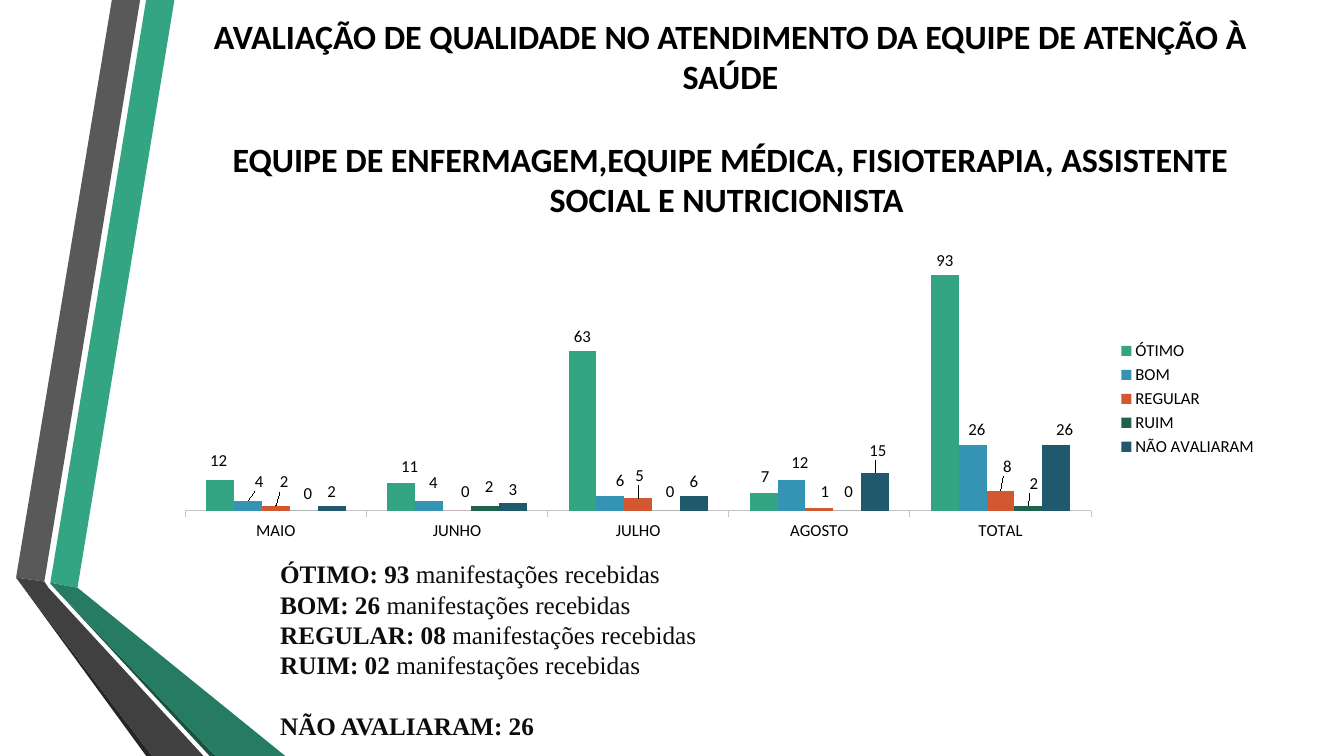
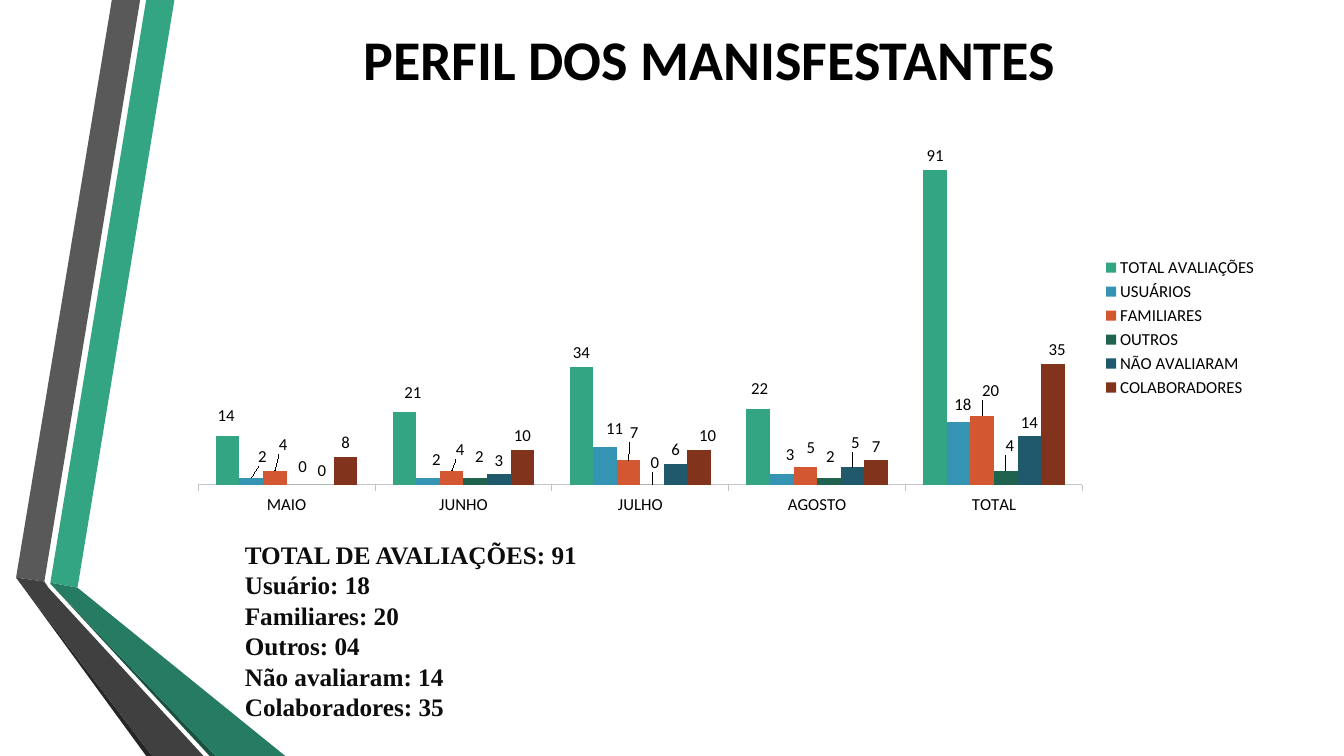
from pptx import Presentation
from pptx.chart.data import CategoryChartData
from pptx.dml.color import RGBColor
from pptx.enum.chart import XL_CHART_TYPE, XL_LABEL_POSITION, XL_LEGEND_POSITION, XL_TICK_MARK
from pptx.enum.text import MSO_ANCHOR, MSO_AUTO_SIZE, PP_ALIGN
from pptx.oxml import parse_xml
from pptx.oxml.ns import nsdecls
from pptx.util import Pt

BLACK = RGBColor(0x00, 0x00, 0x00)
INK = RGBColor(0x0D, 0x0D, 0x0D)
AXIS = RGBColor(0xC5, 0xC5, 0xC5)
GREEN = RGBColor(0x33, 0xA5, 0x83)
MID_GREEN = RGBColor(0x26, 0x7C, 0x62)
DEEP_GREEN = RGBColor(0x1A, 0x52, 0x42)
GREY = RGBColor(0x59, 0x59, 0x59)
DARK_GREY = RGBColor(0x40, 0x40, 0x40)
CHARCOAL = RGBColor(0x26, 0x26, 0x26)
BLUE = RGBColor(0x35, 0x94, 0xB4)
ORANGE = RGBColor(0xD3, 0x57, 0x31)
FOREST = RGBColor(0x1F, 0x63, 0x4F)
NAVY = RGBColor(0x20, 0x59, 0x6C)
RUST = RGBColor(0x81, 0x33, 0x1B)
SERIES_COLORS = [GREEN, BLUE, ORANGE, FOREST, NAVY, RUST]

BANDS = [
    (GREEN, [(36, 416.2), (55.4, 419.8), (124.6, 0), (104.4, 0)]),
    (GREY, [(100.1, 0), (79.9, 0), (11.5, 412.6), (31.7, 415.4)]),
    (CHARCOAL, [(11.5, 412.6), (104.4, 540), (108.7, 540)]),
    (DEEP_GREEN, [(36, 416.9), (149.8, 540), (154.1, 540)]),
    (MID_GREEN, [(36, 416.9), (154.1, 540), (203.8, 540), (55.4, 419.8), (36, 416.2)]),
    (DARK_GREY, [(145.4, 540), (34.6, 419.8), (31.7, 415.4), (11.5, 412.6), (108.7, 540)]),
]
MONTHS = ["MAIO", "JUNHO", "JULHO", "AGOSTO", "TOTAL"]
LINE = 21.7

QUALITY = [
    ("ÓTIMO", [12, 11, 63, 7, 93], {0: (-1, -4), 1: (6, -2), 3: (1, -2)}),
    ("BOM", [4, 4, 6, 12, 26], {0: (8, -4), 1: (3, -3), 2: (7, -1), 3: (6, -3), 4: (3, -1)}),
    ("REGULAR", [2, 0, 5, 1, 8], {0: (6, -7), 1: (6, -4), 2: (1, -6), 3: (4, -2), 4: (5, -7)}),
    ("RUIM", [0, 2, 0, 0, 2], {0: (3, -2), 1: (3, -4), 2: (3, -4), 3: (1, -4), 4: (4, -6)}),
    ("NÃO AVALIARAM", [2, 3, 6, 15, 26], {3: (2, -6), 4: (6, -1)}),
]
PROFILE = [
    ("TOTAL AVALIAÇÕES", [14, 21, 34, 22, 91], {0: (-1, -5), 1: (6, -4), 3: (1, -4)}),
    ("USUÁRIOS", [2, 2, 11, 3, 18], {0: (8, -5), 1: (6, -3), 2: (7, -3), 3: (6, -4), 4: (3, -3)}),
    ("FAMILIARES", [4, 4, 7, 5, 20], {0: (6, -9), 1: (6, -5), 2: (4, -10), 3: (4, -4), 4: (6, -8)}),
    ("OUTROS", [0, 2, 0, 2, 4], {0: (3, -3), 1: (3, -5), 2: (2, -6), 3: (1, -5), 4: (3, -8)}),
    ("NÃO AVALIARAM", [0, 3, 6, 5, 14], {3: (2, -8)}),
    ("COLABORADORES", [8, 10, 10, 7, 35], {2: (6, 0), 4: (3, 0)}),
]


def put(obj, **fmt):
    for name, value in fmt.items():
        setattr(obj, name, value)


def set_font(font, color=BLACK, **fmt):
    put(font, **fmt)
    font.color.rgb = color


def manual_layout(target="", **values):
    inner = f'<c:layoutTarget val="{target}"/><c:xMode val="edge"/><c:yMode val="edge"/>' if target else ""
    inner += "".join(f'<c:{k} val="{v:.4f}"/>' for k, v in values.items())
    return parse_xml(f'<c:layout {nsdecls("c")}><c:manualLayout>{inner}</c:manualLayout></c:layout>')


class Deck:
    """Holds the shared style and the slide being built."""

    chart_font = dict(name="Calibri", size=Pt(12))
    title_font = dict(name="Calibri", bold=True)
    body_font = dict(name="Times New Roman", size=Pt(18))

    def __init__(self):
        self.prs = Presentation()
        put(self.prs, slide_width=Pt(960), slide_height=Pt(540))

    def slide(self):
        self.s = self.prs.slides.add_slide(self.prs.slide_layouts[5])
        for color, points in BANDS:
            corners = [(Pt(x), Pt(y)) for x, y in points]
            fb = self.s.shapes.build_freeform(*corners[0])
            fb.add_line_segments(corners[1:], close=True)
            sp = fb.convert_to_shape()
            sp.shadow.inherit = False
            sp.fill.solid()
            sp.fill.fore_color.rgb = color
            sp.line.fill.background()

    def title(self, box, size, *paragraphs):
        sp = self.s.shapes.title
        put(sp, **dict(zip(("left", "top", "width", "height"), map(Pt, box))))
        tf = sp.text_frame
        put(tf, word_wrap=True, auto_size=MSO_AUTO_SIZE.NONE, vertical_anchor=MSO_ANCHOR.MIDDLE)
        for i, text in enumerate(paragraphs):
            p = tf.add_paragraph() if i else tf.paragraphs[0]
            put(p, alignment=PP_ALIGN.CENTER, line_spacing=1.0, space_before=Pt(29.5 if i else 0))
            r = p.add_run()
            r.text = text
            set_font(r.font, size=Pt(size), **self.title_font)

    def summary(self, box, rows):
        tf = self.s.shapes.add_textbox(*map(Pt, box)).text_frame
        tf.word_wrap = True
        for i, (label, rest, gap) in enumerate(rows):
            p = tf.add_paragraph() if i else tf.paragraphs[0]
            put(p, line_spacing=Pt(LINE), space_before=Pt(gap))
            for text, bold in ((label, True), (rest, False)):
                if text:
                    r = p.add_run()
                    r.text = text
                    set_font(r.font, INK, bold=bold, **self.body_font)

    def chart(self, box, rows, plot_width, plot_height):
        data = CategoryChartData()
        data.categories = MONTHS
        for name, values, _ in rows:
            data.add_series(name, values)
        chart = self.s.shapes.add_chart(XL_CHART_TYPE.COLUMN_CLUSTERED, *map(Pt, box), data).chart
        put(chart, has_title=False, has_legend=True)
        put(chart.legend, position=XL_LEGEND_POSITION.RIGHT, include_in_layout=False)
        cat, val, plot = chart.category_axis, chart.value_axis, chart.plots[0]
        for font in (chart.font, chart.legend.font, cat.tick_labels.font):
            set_font(font, **self.chart_font)
        put(cat, major_tick_mark=XL_TICK_MARK.OUTSIDE, has_major_gridlines=False)
        cat.format.line.color.rgb = AXIS
        cat.format.line.width = Pt(0.75)
        put(val, visible=False, has_major_gridlines=False, minimum_scale=0, maximum_scale=100)
        put(plot, gap_width=150, overlap=0, vary_by_categories=False)
        for ser, color, (_, _, shifts) in zip(plot.series, SERIES_COLORS, rows):
            ser.format.fill.solid()
            ser.format.fill.fore_color.rgb = color
            put(ser.data_labels, show_value=True, position=XL_LABEL_POSITION.OUTSIDE_END)
            set_font(ser.data_labels.font, **self.chart_font)
            for i, (dx, dy) in shifts.items():
                ser.points[i].data_label.position = XL_LABEL_POSITION.OUTSIDE_END
                label = ser._element.xpath(f"c:dLbls/c:dLbl[c:idx/@val='{i}']")[0]
                label.insert(1, manual_layout(x=dx / box[2], y=dy / box[3]))
        area = chart._chartSpace.xpath("c:chart/c:plotArea")[0]
        for old in area.xpath("c:layout"):
            area.remove(old)
        area.insert(0, manual_layout("inner", x=0.02, y=0.02, w=plot_width, h=plot_height))


def main():
    d = Deck()

    d.slide()
    d.title((129, 11.5, 785.5, 144.7), 24.3,
            "AVALIAÇÃO DE QUALIDADE NO ATENDIMENTO DA EQUIPE DE ATENÇÃO À SAÚDE",
            "EQUIPE DE ENFERMAGEM,EQUIPE MÉDICA, FISIOTERAPIA, ASSISTENTE SOCIAL E NUTRICIONISTA ")
    received = "manifestações recebidas"
    counts = ["ÓTIMO: 93 ", "BOM: 26 ", "REGULAR: 08 ", "RUIM: 02 "]
    d.summary((193, 395.3, 721.4, 138.2),
              [(c, received, 0) for c in counts] + [("NÃO AVALIARAM: 26", "", LINE)])
    d.chart((116.6, 179.3, 789.1, 211), QUALITY, 0.82, 0.86)

    d.slide()
    d.title((116.6, 6.5, 789.1, 70.6), 40, "PERFIL DOS MANISFESTANTES ")
    counts = ["TOTAL DE AVALIAÇÕES: 91", "Usuário: 18", "Familiares: 20",
              "Outros: 04", "Não avaliaram: 14", "Colaboradores: 35"]
    d.summary((167.8, 381.6, 738, 150), [(c, "", 0) for c in counts])
    d.chart((126, 93.6, 779.8, 280.8), PROFILE, 0.81, 0.88)

    d.prs.save("out.pptx")


if __name__ == "__main__":
    main()
